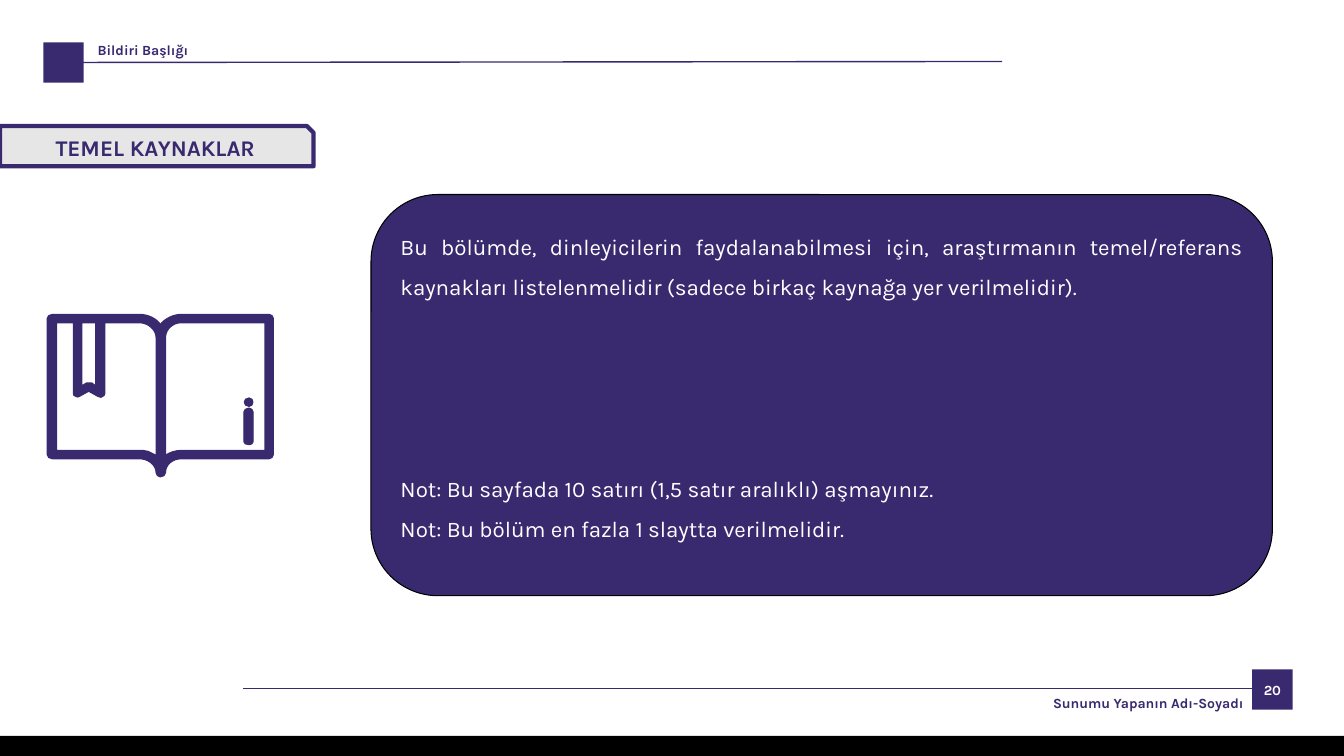
"""Builds the sources slide: header, title tag, open book, note panel and footer."""
from lxml import etree
from pptx import Presentation
from pptx.dml.color import RGBColor
from pptx.enum.shapes import MSO_CONNECTOR, MSO_SHAPE
from pptx.enum.text import MSO_ANCHOR, MSO_AUTO_SIZE, PP_ALIGN
from pptx.oxml.ns import qn
from pptx.util import Inches, Pt

RECT, ROUND = MSO_SHAPE.RECTANGLE, MSO_SHAPE.ROUNDED_RECTANGLE
SNIP = MSO_SHAPE.SNIP_1_RECTANGLE
STRAIGHT = MSO_CONNECTOR.STRAIGHT
TOP, MIDDLE = MSO_ANCHOR.TOP, MSO_ANCHOR.MIDDLE
FIXED = MSO_AUTO_SIZE.NONE
LEFT, CENTER, RIGHT, JUSTIFY = PP_ALIGN.LEFT, PP_ALIGN.CENTER, PP_ALIGN.RIGHT, PP_ALIGN.JUSTIFY
FONT = "Karla"
COLORS = {"purple": "39296F", "gray": "E7E6E6", "white": "FFFFFF", "black": "000000"}
NOTES = [
    "Bu bölümde, dinleyicilerin faydalanabilmesi için, araştırmanın temel/referans "
    "kaynakları listelenmelidir (sadece birkaç kaynağa yer verilmelidir).",
    "Not: Bu sayfada 10 satırı (1,5 satır aralıklı) aşmayınız.",
    "Not: Bu bölüm en fazla 1 slaytta verilmelidir.",
]
BOOK = [
    [(2.47, 4.05), (2.49, 4.05, 2.51, 4.07, 2.51, 4.09), (2.51, 4.38),
     (2.51, 4.4, 2.49, 4.41, 2.47, 4.41), (2.44, 4.41, 2.42, 4.4, 2.42, 4.38),
     (2.42, 4.09), (2.42, 4.07, 2.44, 4.05, 2.47, 4.05)],
    [(2.47, 3.95), (2.52, 3.95, 2.52, 4.03, 2.47, 4.03),
     (2.41, 4.03, 2.41, 3.95, 2.47, 3.95)],
    [(1.8, 3.2), (1.71, 3.2, 1.64, 3.27, 1.64, 3.35), (1.64, 4.52),
     (1.68, 4.49, 1.74, 4.47, 1.8, 4.47), (2.63, 4.47), (2.63, 3.2)],
    [(0.81, 3.2), (0.81, 3.83), (0.86, 3.8), (0.87, 3.8, 0.87, 3.8, 0.88, 3.8),
     (0.89, 3.8, 0.9, 3.8, 0.91, 3.8), (0.95, 3.83), (0.95, 3.2), (0.81, 3.2)],
    [(0.56, 3.2), (0.56, 4.47), (1.38, 4.47), (1.41, 4.47, 1.44, 4.47, 1.47, 4.48),
     (1.55, 4.52), (1.55, 3.35), (1.55, 3.27, 1.47, 3.2, 1.38, 3.2), (1.04, 3.2),
     (1.04, 3.9), (1.04, 3.91, 1.03, 3.93, 1.02, 3.93),
     (1.01, 3.94, 1, 3.94, 1, 3.94), (0.99, 3.94, 0.98, 3.93, 0.97, 3.93),
     (0.88, 3.88), (0.79, 3.93), (0.78, 3.94, 0.76, 3.94, 0.75, 3.93),
     (0.73, 3.93, 0.73, 3.91, 0.73, 3.9), (0.73, 3.2)],
    [(0.52, 3.12), (1.38, 3.12), (1.47, 3.12, 1.55, 3.16, 1.59, 3.22),
     (1.64, 3.16, 1.72, 3.12, 1.8, 3.12), (2.67, 3.12),
     (2.69, 3.12, 2.71, 3.14, 2.71, 3.16), (2.71, 4.51),
     (2.71, 4.53, 2.69, 4.55, 2.67, 4.55), (1.8, 4.55),
     (1.71, 4.55, 1.64, 4.61, 1.64, 4.69), (1.64, 4.71, 1.62, 4.73, 1.59, 4.73),
     (1.57, 4.73, 1.55, 4.71, 1.55, 4.69), (1.55, 4.61, 1.47, 4.55, 1.38, 4.55),
     (0.52, 4.55), (0.49, 4.55, 0.47, 4.53, 0.47, 4.51), (0.47, 3.16),
     (0.47, 3.14, 0.49, 3.12, 0.52, 3.12)],
]


def color(name):
    return RGBColor.from_string(COLORS[name])


def paint(shape, fill, line=None, width=1):
    shape.shadow.inherit = False
    shape.fill.solid()
    shape.fill.fore_color.rgb = color(fill)
    if line:
        shape.line.color.rgb = color(line)
        shape.line.width = Pt(width)
    else:
        shape.line.fill.background()


def write(shape, texts, size, ink, align, bold=True, anchor=MIDDLE):
    frame = shape.text_frame
    frame.word_wrap = True
    frame.auto_size = FIXED
    frame.vertical_anchor = anchor
    frame.text = "\n".join(texts)
    for para in frame.paragraphs:
        para.alignment = align
        para.font.name = FONT
        para.font.size = Pt(size)
        para.font.bold = bold
        para.font.color.rgb = color(ink)
    return frame


def add_box(slide, kind, area, fill, line=None, width=1):
    box = slide.shapes.add_shape(kind, *map(Inches, area))
    paint(box, fill, line, width)
    return box


def add_label(slide, area, text, align):
    label = slide.shapes.add_textbox(*map(Inches, area))
    write(label, [text], 10, "purple", align, anchor=TOP)


def add_rule(slide, *ends):
    rule = slide.shapes.add_connector(STRAIGHT, *map(Inches, ends))
    rule.line.color.rgb = color("purple")
    rule.line.width = Pt(1)
    etree.SubElement(rule._element.spPr, qn("a:effectLst"))


def add_title(slide, text):
    tag = add_box(slide, SNIP, (0, 1.25, 3.11, 0.4), "gray", "purple", 3)
    title = slide.shapes.title
    title._element.addprevious(tag._element)
    title.left, title.top, title.width, title.height = map(Inches, (0, 1.26, 3.08, 0.4))
    frame = write(title, [text], 16, "purple", CENTER)
    frame.paragraphs[0].line_spacing = 1


def add_notes(slide):
    panel = add_box(slide, ROUND, (3.68, 1.93, 8.94, 3.98), "purple", "black", 0.75)
    frame = write(panel, NOTES, 16, "white", JUSTIFY, bold=False)
    frame.margin_bottom = Inches(0.33)
    for para in frame.paragraphs:
        para.line_spacing = 1.5
    frame.paragraphs[1].space_before = Pt(115)


def bend(line, step, left, top):
    """Turn a straight segment into a Bézier curve."""
    line.tag = qn("a:cubicBezTo")
    for old in list(line):
        line.remove(old)
    for x, y in zip(step[::2], step[1::2]):
        etree.SubElement(line, qn("a:pt"), x=str(Inches(x) - left), y=str(Inches(y) - top))


def add_book(slide):
    pen = None
    for steps in BOOK:
        start, *ends = [tuple(map(Inches, step[-2:])) for step in steps]
        if pen:
            pen.move_to(*start)
        else:
            pen = slide.shapes.build_freeform(*start)
        pen.add_line_segments(ends, close=True)
    book = pen.convert_to_shape()
    paint(book, "purple", "purple")
    lines = list(book._element.iter(qn("a:lnTo")))
    steps = [step for outline in BOOK for step in outline[1:]]
    for line, step in zip(lines, steps):
        if len(step) == 6:
            bend(line, step, book.left, book.top)


def main():
    deck = Presentation()
    deck.slide_width, deck.slide_height = Inches(13.33), Inches(7.5)
    slide = deck.slides.add_slide(deck.slide_layouts[5])
    add_title(slide, "TEMEL KAYNAKLAR")
    add_rule(slide, 0.79, 0.62, 9.94, 0.61)
    add_label(slide, (0.87, 0.36, 8.57, 0.27), "Bildiri Başlığı", LEFT)
    add_box(slide, RECT, (0.43, 0.42, 0.4, 0.4), "purple")
    add_notes(slide)
    add_book(slide)
    add_rule(slide, 2.41, 6.83, 12.42, 6.83)
    add_label(slide, (10.21, 6.84, 2.22, 0.27), "Sunumu Yapanın Adı-Soyadı", RIGHT)
    page = add_box(slide, RECT, (12.42, 6.64, 0.4, 0.4), "purple")
    write(page, ["20"], 10, "white", CENTER)
    add_box(slide, RECT, (0, 7.3, 13.33, 0.2), "black")
    deck.save("out.pptx")


if __name__ == "__main__":
    main()
